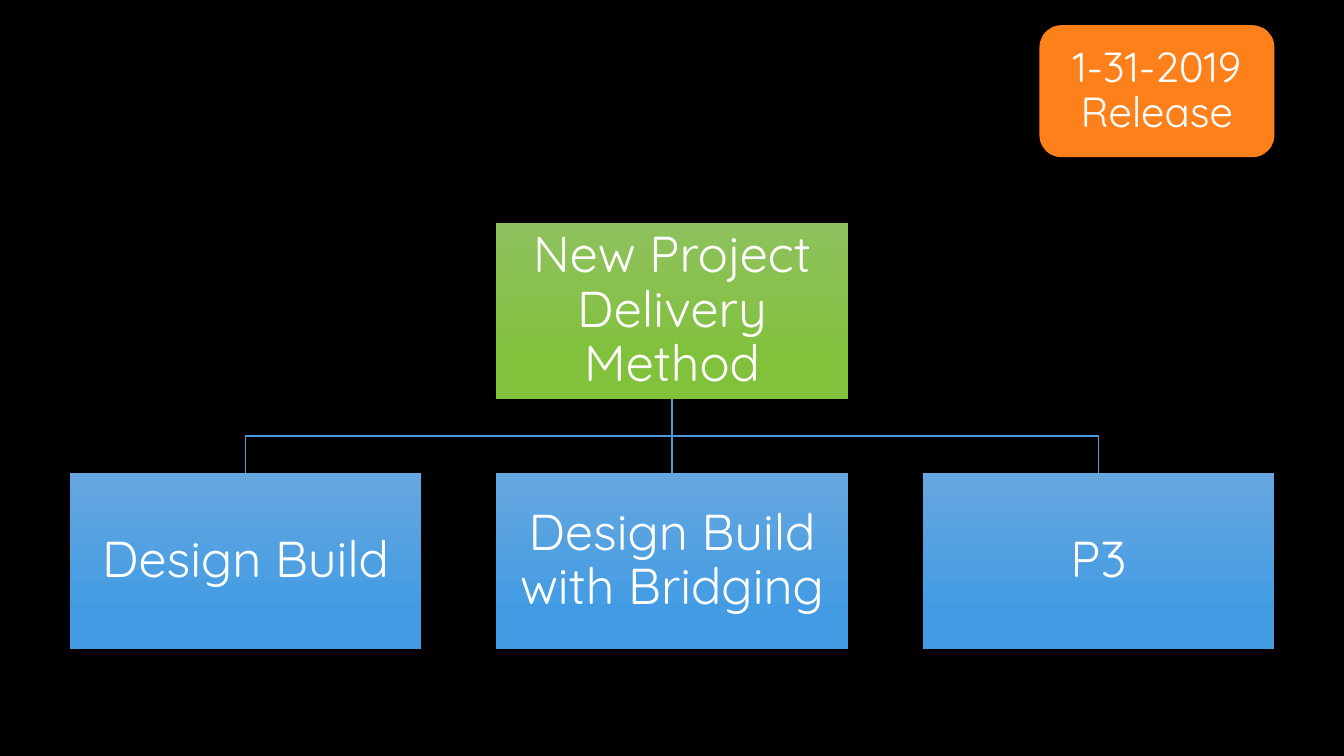
"""Build the project delivery method chart slide."""
from pptx import Presentation
from pptx.dml.color import RGBColor
from pptx.enum.shapes import MSO_CONNECTOR, MSO_SHAPE
from pptx.enum.text import MSO_ANCHOR, PP_ALIGN
from pptx.oxml.ns import qn
from pptx.util import Inches, Pt
from lxml import etree

BLACK = RGBColor(0x00, 0x00, 0x00)
WHITE = RGBColor(0xFF, 0xFF, 0xFF)
ORANGE = RGBColor(0xFE, 0x80, 0x1A)
LINE_BLUE = RGBColor(0x4A, 0x9B, 0xDC)
GREENS = (RGBColor(0x8F, 0xC1, 0x5E), RGBColor(0x81, 0xC1, 0x3C))
BLUES = (RGBColor(0x66, 0xA7, 0xE0), RGBColor(0x43, 0x9C, 0xE3))

BOX_W, BOX_H = 3.49, 1.75
LEFT, STEP = 0.69, 4.23
ROOT_TOP, CHILD_TOP = 2.21, 4.69
ROOT_BOTTOM = ROOT_TOP + BOX_H
MID_X = LEFT + STEP + BOX_W / 2
BEND_Y = (ROOT_BOTTOM + CHILD_TOP) / 2


def add_box(kind, x, y, w, h, lines, size, inset):
    sp = s.shapes.add_shape(kind, Inches(x), Inches(y), Inches(w), Inches(h))
    sp.shadow.inherit = False
    sp.line.fill.background()
    tf = sp.text_frame
    tf.word_wrap = True
    tf.vertical_anchor = MSO_ANCHOR.MIDDLE
    tf.margin_left = tf.margin_right = Inches(inset)
    tf.margin_top = tf.margin_bottom = Inches(inset)
    p = tf.paragraphs[0]
    p.alignment = PP_ALIGN.CENTER
    p.line_spacing = 0.9
    for i, line in enumerate(lines):
        if i:
            p.add_line_break()
        r = p.add_run()
        r.text = line
        r.font.name = "Quicksand"
        r.font.size = Pt(size)
        r.font.color.rgb = WHITE
    return sp


def add_node(x, y, text, colors):
    sp = add_box(MSO_SHAPE.RECTANGLE, x, y, BOX_W, BOX_H, [text], 36, 0.03)
    sp.fill.gradient()
    sp.fill.gradient_angle = 270
    for stop, position, color in zip(sp.fill.gradient_stops, (0, 0.78), colors):
        stop.position = position
        stop.color.rgb = color
    return sp


prs = Presentation()
prs.slide_width, prs.slide_height = Inches(13.33), Inches(7.5)
s = prs.slides.add_slide(prs.slide_layouts[6])
s.background.fill.solid()
s.background.fill.fore_color.rgb = BLACK

release = add_box(MSO_SHAPE.ROUNDED_RECTANGLE, 10.31, 0.25, 2.33, 1.31,
                  ["1-31-2019", "Release"], 30, 0.18)
release.fill.solid()
release.fill.fore_color.rgb = ORANGE

for x in (MID_X + STEP, MID_X - STEP):
    fb = s.shapes.build_freeform(Inches(MID_X), Inches(ROOT_BOTTOM))
    fb.add_line_segments([(Inches(MID_X), Inches(BEND_Y)),
                          (Inches(x), Inches(BEND_Y)),
                          (Inches(x), Inches(CHILD_TOP))], close=False)
    branch = fb.convert_to_shape()
    branch.shadow.inherit = False
    branch.fill.background()
    branch.line.color.rgb = LINE_BLUE
    branch.line.width = Pt(1)

stem = s.shapes.add_connector(MSO_CONNECTOR.STRAIGHT, Inches(MID_X), Inches(ROOT_BOTTOM),
                              Inches(MID_X), Inches(CHILD_TOP))
stem.line.color.rgb = LINE_BLUE
stem.line.width = Pt(1)
etree.SubElement(stem._element.spPr, qn("a:effectLst"))

root = add_node(LEFT + STEP, ROOT_TOP, "New Project Delivery Method", GREENS)
methods = [add_node(LEFT + i * STEP, CHILD_TOP, text, BLUES)
           for i, text in enumerate(("Design Build", "Design Build with Bridging", "P3"))]
stem.begin_connect(root, 2)
stem.end_connect(methods[1], 0)

prs.save("out.pptx")
